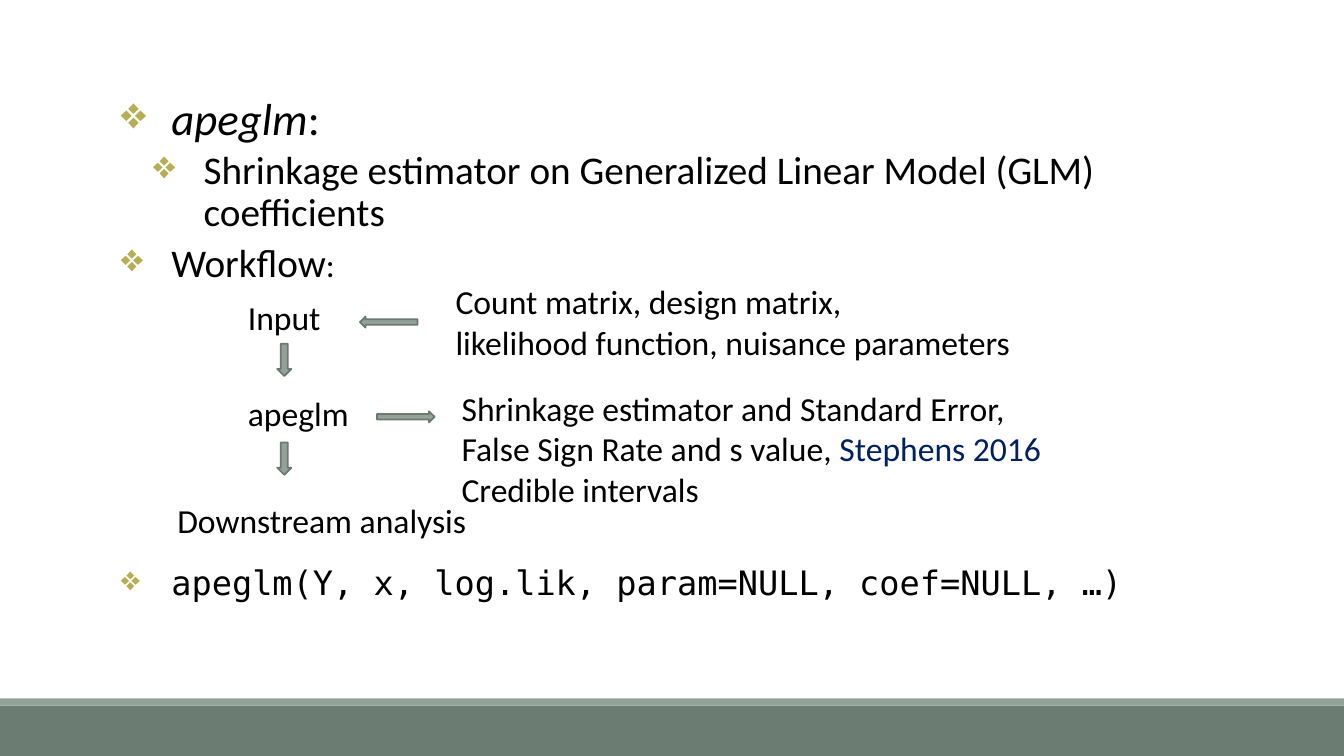
from lxml import etree
from pptx import Presentation
from pptx.dml.color import RGBColor
from pptx.enum.shapes import MSO_SHAPE
from pptx.oxml.ns import qn
from pptx.util import Inches, Pt

RECTANGLE = MSO_SHAPE.RECTANGLE
DOWN_ARROW = MSO_SHAPE.DOWN_ARROW
RIGHT_ARROW = MSO_SHAPE.RIGHT_ARROW

BLACK = RGBColor(0x00, 0x00, 0x00)
NAVY = RGBColor(0x00, 0x20, 0x60)
DARK_GREEN = RGBColor(0x6B, 0x7D, 0x72)
SAGE = RGBColor(0x93, 0xA2, 0x99)
ARROW_EDGE = RGBColor(0x6D, 0x78, 0x71)
OLIVE = RGBColor(0xB5, 0xAE, 0x53)

TEXT_FONT = "Calibri"
CODE_FONT = "DejaVu Sans Mono"

deck = Presentation()
deck.slide_width = Inches(13.33)
deck.slide_height = Inches(7.5)
page = deck.slides.add_slide(deck.slide_layouts[6])


def add_filled_shape(kind, left, top, width, height, fill):
    shape = page.shapes.add_shape(
        kind, Inches(left), Inches(top), Inches(width), Inches(height))
    shape.shadow.inherit = False
    shape.fill.solid()
    shape.fill.fore_color.rgb = fill
    shape.line.fill.background()
    return shape


def add_span(para, text, size=24, font=TEXT_FONT, color=BLACK, italic=False):
    span = para.add_run()
    span.text = text
    span.font.size = Pt(size)
    span.font.name = font
    span.font.color.rgb = color
    span.font.italic = italic


# Footer bands
add_filled_shape(RECTANGLE, 0, 7, 13.33, 0.5, DARK_GREEN)
add_filled_shape(RECTANGLE, 0, 6.93, 13.33, 0.07, SAGE)

# Bulleted outline: indent, space before, space after, spans.
# The large space before the code line leaves room for the workflow.
outline = [
    (0.5, 12, 2, [("apeglm", 32, TEXT_FONT, BLACK, True), (":", 32)]),
    (0.82, 2, 4, [("Shrinkage estimator on Generalized Linear Model (GLM) "
                   "coefficients", 28)]),
    (0.5, 2, 4, [("Workflow", 28), (":", 24)]),
    (0.5, 196, 4, [("apeglm(Y, x, log.lik, param=NULL, coef=NULL, …)",
                    24, CODE_FONT)]),
]
body = page.shapes.add_textbox(Inches(1.2), Inches(0.91), Inches(11), Inches(5.61))
frame = body.text_frame
frame.word_wrap = True
frame.margin_left = frame.margin_right = 0
for index, (indent, before, after, spans) in enumerate(outline):
    para = frame.paragraphs[0] if index == 0 else frame.add_paragraph()
    para.line_spacing = 0.9
    para.space_before = Pt(before)
    para.space_after = Pt(after)
    properties = para._p.get_or_add_pPr()
    properties.set("marL", str(Inches(indent)))
    properties.set("indent", str(Inches(-0.5)))
    bullet_color = etree.SubElement(properties, qn("a:buClr"))
    etree.SubElement(bullet_color, qn("a:srgbClr"), val=str(OLIVE))
    etree.SubElement(properties, qn("a:buChar"), char="❖")
    for span in spans:
        add_span(para, *span)

# Workflow labels: left, top, width, height, wrap, lines
labels = [
    (2.36, 2.9, 1.06, 0.5, True, ["Input"]),
    (4.42, 2.74, 6.67, 0.91, True,
     ["Count matrix, design matrix,", "likelihood function, nuisance parameters"]),
    (2.36, 3.85, 1.21, 0.5, False, ["apeglm"]),
    (4.48, 3.8, 6, 1.31, False,
     ["Shrinkage estimator and Standard Error,",
      "False Sign Rate and s value, ", "Credible intervals"]),
    (1.66, 4.91, 3.09, 0.5, False, ["Downstream analysis"]),
]
for left, top, width, height, wrap, lines in labels:
    box = page.shapes.add_textbox(
        Inches(left), Inches(top), Inches(width), Inches(height))
    frame = box.text_frame
    frame.word_wrap = wrap
    for index, line in enumerate(lines):
        para = frame.paragraphs[0] if index == 0 else frame.add_paragraph()
        add_span(para, line)
        if line.startswith("False Sign Rate"):
            add_span(para, "Stephens 2016", color=NAVY)

# Workflow arrows: kind, left, top, width, height, rotation
arrows = [
    (DOWN_ARROW, 2.75, 3.41, 0.14, 0.32, 0),
    (DOWN_ARROW, 2.75, 4.39, 0.14, 0.32, 0),
    (RIGHT_ARROW, 3.57, 3.14, 0.57, 0.11, 180),
    (RIGHT_ARROW, 3.74, 4.08, 0.57, 0.11, 0),
]
for kind, left, top, width, height, rotation in arrows:
    arrow = add_filled_shape(kind, left, top, width, height, SAGE)
    arrow.line.color.rgb = ARROW_EDGE
    arrow.line.width = Pt(1.25)
    arrow.rotation = rotation

deck.save("out.pptx")
